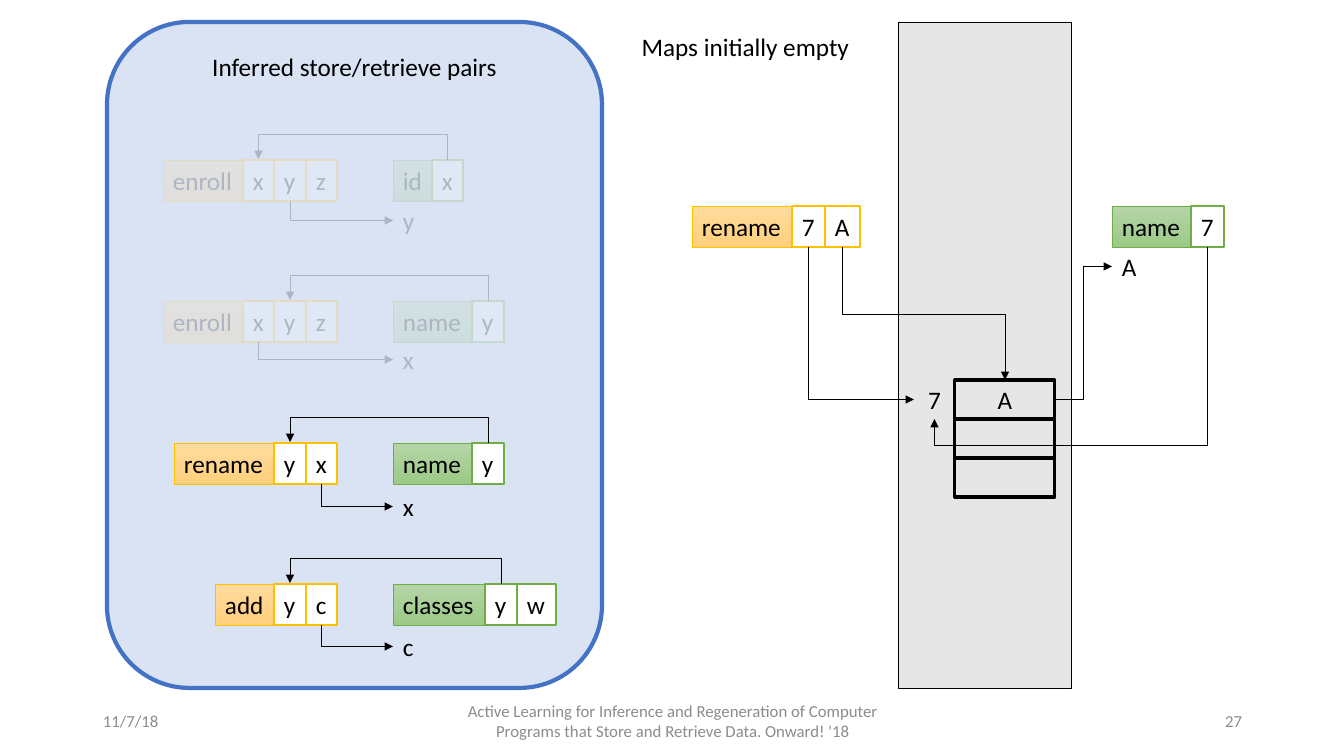
import pptx
import pptx.dml.color
import pptx.enum.shapes
import pptx.enum.text
import pptx.oxml.ns
import pptx.util
from lxml import etree

PX = 914400 / 100.8
TOP, LEFT, BOTTOM, RIGHT = range(4)
BOX_HEIGHT = 41
COLOURS = {
    "black": "000000", "white": "FFFFFF", "footer": "8C8C8C",
    "panel": "DAE3F3", "panel edge": "4472C4", "program": "E7E6E6",
    "store": "FFC000", "store top": "FFDB9E", "store bottom": "FFD07C",
    "retrieve": "70AD47", "retrieve top": "B5D5A7", "retrieve bottom": "9CC987",
}
WIDTHS = {
    "enroll": 80, "rename": 100, "add": 59, "name": 79, "id": 39, "classes": 92,
    "x": 31, "y": 32, "z": 31, "c": 31, "w": 39, "7": 33, "A": 35,
}
ALIGN = pptx.enum.text.PP_ALIGN
ANCHOR = pptx.enum.text.MSO_ANCHOR
SHAPE = pptx.enum.shapes.MSO_SHAPE


def emu(px):
    return round(px * PX)


def rgb(name):
    return pptx.dml.color.RGBColor.from_string(COLOURS[name])


def child(parent, tag, **attributes):
    return etree.SubElement(parent, pptx.oxml.ns.qn(tag), attributes)


class Diagram:
    font = "Calibri"

    def __init__(self, slide):
        self.slide = slide

    def letter(self, shape, text, size=18, colour="black", align=ALIGN.LEFT,
               anchor=ANCHOR.TOP, hug=False):
        frame = shape.text_frame
        frame.text = text
        frame.word_wrap = not hug
        frame.vertical_anchor = anchor
        if hug:
            frame.auto_size = pptx.enum.text.MSO_AUTO_SIZE.SHAPE_TO_FIT_TEXT
        paragraph = frame.paragraphs[0]
        paragraph.alignment = align
        for run in paragraph.runs:
            run.font.name = self.font
            run.font.size = pptx.util.Pt(size)
            run.font.color.rgb = rgb(colour)

    def label(self, x, y, width, height, text, **style):
        box = self.slide.shapes.add_textbox(*map(emu, (x, y, width, height)))
        self.letter(box, text, **style)
        return box

    def box(self, x, y, width, height, fill=None, edge=None, weight=0.5, kind=SHAPE.RECTANGLE):
        shape = self.slide.shapes.add_shape(kind, *map(emu, (x, y, width, height)))
        shape.shadow.inherit = False
        if fill:
            shape.fill.solid()
            shape.fill.fore_color.rgb = rgb(fill)
        else:
            shape.fill.background()
        if edge:
            shape.line.color.rgb = rgb(edge)
            shape.line.width = pptx.util.Pt(weight)
        else:
            shape.line.fill.background()
        return shape

    def veil(self, x, y, width, height, fill, opacity):
        shape = self.box(x, y, width, height, fill)
        colour = shape.element.spPr.find(".//" + pptx.oxml.ns.qn("a:srgbClr"))
        child(colour, "a:alpha", val=str(opacity * 1000))

    def call(self, x, y, role, function, arguments):
        head = self.box(x, y, WIDTHS[function], BOX_HEIGHT, edge=role)
        head.fill.gradient()
        head.fill.gradient_angle = 270
        for stop, end in zip(head.fill.gradient_stops, ("top", "bottom")):
            stop.color.rgb = rgb(f"{role} {end}")
        self.letter(head, function, hug=True)
        x += WIDTHS[function]
        slots = {}
        for argument in arguments:
            slots[argument] = self.box(x, y, WIDTHS[argument], BOX_HEIGHT, "white", role, 1)
            self.letter(slots[argument], argument, hug=True)
            x += WIDTHS[argument]
        return slots

    def arrow(self, source, source_side, target, target_side, bend=None):
        connector = self.slide.shapes.add_connector(
            pptx.enum.shapes.MSO_CONNECTOR.ELBOW, 0, 0, 0, 0)
        connector.begin_connect(source, source_side)
        connector.end_connect(target, target_side)
        start_x, start_y = connector.begin_x, connector.begin_y
        dx = connector.end_x - start_x
        dy = connector.end_y - start_y or -emu(1)
        upright = source_side in (TOP, BOTTOM)
        along, across = (dy, dx) if upright else (dx, dy)
        connector.width, connector.height = abs(along), abs(across)
        connector.left = start_x + (dx - abs(along)) // 2
        connector.top = start_y + (dy - abs(across)) // 2
        properties = connector.element.spPr
        frame = properties.find(pptx.oxml.ns.qn("a:xfrm"))
        if not upright:
            connector.left = min(start_x, start_x + dx)
            connector.top = min(start_y, start_y + dy)
        frame.set("rot", "16200000" if upright else "0")
        frame.set("flipH", str(int(along > 0 if upright else along < 0)))
        frame.set("flipV", str(int(across < 0)))
        geometry = properties.find(pptx.oxml.ns.qn("a:prstGeom"))
        if bend is None:
            geometry.set("prst", "bentConnector2")
        else:
            share = round(emu(bend) / along * 100000)
            guides = geometry.find(pptx.oxml.ns.qn("a:avLst"))
            child(guides, "a:gd", name="adj1", fmla=f"val {share}")
        connector.line.color.rgb = rgb("black")
        connector.line.width = pptx.util.Pt(0.5)
        child(properties.find(pptx.oxml.ns.qn("a:ln")), "a:tailEnd", type="triangle")
        child(properties, "a:effectLst")

    def pair(self, y, store, stored, retrieve, asked, value, value_drop):
        store_x = 337 - sum(WIDTHS[part] for part in (store, *stored))
        stores = self.call(store_x, y, "store", store, stored)
        retrieves = self.call(393, y, "retrieve", retrieve, asked)
        result = self.label(393, y + value_drop, WIDTHS[value], BOX_HEIGHT, value, hug=True)
        key = asked[0]
        self.arrow(retrieves[key], TOP, stores[key], TOP, -26)
        self.arrow(stores[value], BOTTOM, result, LEFT)


def main():
    deck = pptx.Presentation()
    deck.slide_width, deck.slide_height = emu(1344), emu(756)
    diagram = Diagram(deck.slides.add_slide(deck.slide_layouts[6]))

    diagram.box(898, 22, 173, 666, "program", "black")
    panel = diagram.box(107, 22, 495, 666, "panel", "panel edge", 3, SHAPE.ROUNDED_RECTANGLE)
    diagram.letter(panel, "Inferred store/retrieve pairs", align=ALIGN.CENTER)

    pairs = [
        ("enroll", "xyz", "id", "x", "y", 40),
        ("enroll", "xyz", "name", "y", "x", 38),
        ("rename", "yx", "name", "y", "x", 43),
        ("add", "yc", "classes", "yw", "c", 42),
    ]
    for index, inferred in enumerate(pairs):
        diagram.pair(160 + index * 283 // 2, *inferred)
        if index == 1:
            diagram.veil(131, 124, 447, 268, "panel", 80)

    diagram.label(629, 26, 230, BOX_HEIGHT, "Maps initially empty", align=ALIGN.RIGHT, hug=True)
    renamed = diagram.call(692, 206, "store", "rename", "7A")
    named = diagram.call(1112, 206, "retrieve", "name", "7")
    answer = diagram.label(1112, 246, WIDTHS["A"], BOX_HEIGHT, "A", hug=True)

    centred = {"align": ALIGN.CENTER, "anchor": ANCHOR.MIDDLE}
    map_key = diagram.label(914, 380, 41, 39, "7", **centred)
    map_values = [diagram.box(955, 380 + 39 * row, 100, 39, edge="black", weight=2.25)
                  for row in range(3)]
    diagram.letter(map_values[0], "A", **centred)

    diagram.arrow(renamed["7"], BOTTOM, map_key, LEFT)
    diagram.arrow(renamed["A"], BOTTOM, map_values[0], TOP, 67)
    diagram.arrow(named["7"], BOTTOM, map_key, BOTTOM, 198)
    diagram.arrow(map_values[0], RIGHT, answer, LEFT, 28)

    footers = [
        (93, 302, "11/7/18", ALIGN.LEFT),
        (446, 454, "Active Learning for Inference and Regeneration of Computer "
                   "Programs that Store and Retrieve Data. Onward! '18", ALIGN.CENTER),
        (950, 302, "27", ALIGN.RIGHT),
    ]
    for x, width, text, align in footers:
        diagram.label(x, 701, width, 40, text, size=12, colour="footer",
                      align=align, anchor=ANCHOR.MIDDLE)

    deck.save("out.pptx")


if __name__ == "__main__":
    main()
